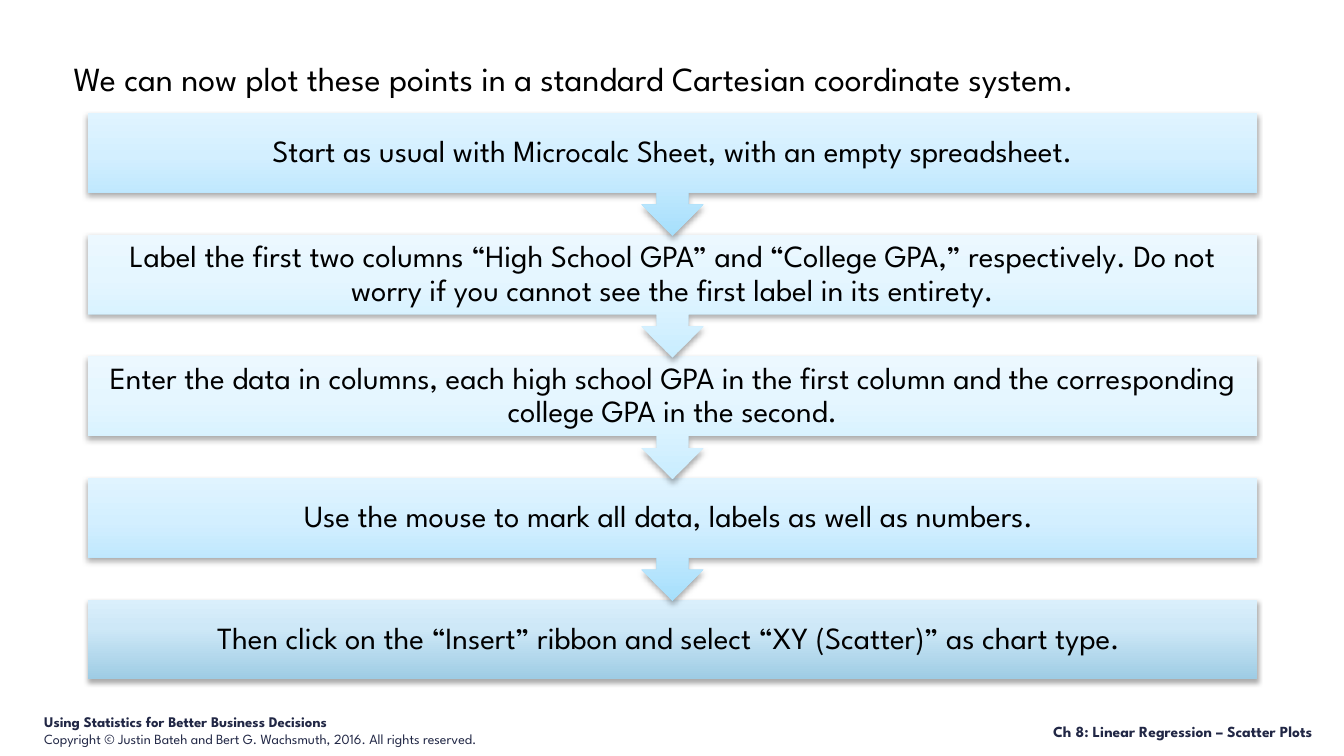
import pptx
import pptx.dml.color
import pptx.enum.text
import pptx.oxml
import pptx.oxml.ns
import pptx.util

Inches = pptx.util.Inches
Pt = pptx.util.Pt
RGBColor = pptx.dml.color.RGBColor
ALIGN = pptx.enum.text.PP_ALIGN
ANCHOR = pptx.enum.text.MSO_ANCHOR

BLACK = RGBColor(0x00, 0x00, 0x00)
NAVY = RGBColor(0x21, 0x27, 0x45)
LIGHT = [RGBColor(0xC9, 0xED, 0xFF), RGBColor(0xE5, 0xF6, 0xFF), RGBColor(0xEC, 0xF8, 0xFF)]
MEDIUM = [RGBColor(0xA6, 0xDF, 0xFC), RGBColor(0xD3, 0xEF, 0xFF), RGBColor(0xE0, 0xF4, 0xFF)]
DARK = [RGBColor(0x9E, 0xCC, 0xE4), RGBColor(0xCE, 0xE8, 0xF7), RGBColor(0xDA, 0xEF, 0xFC)]

STEPS = [
    ("Start as usual with Microcalc Sheet, with an empty spreadsheet.", MEDIUM),
    ("Label the first two columns “High School GPA” and “College GPA,” respectively. "
     "Do not worry if you cannot see the first label in its entirety.", LIGHT),
    ("Enter the data in columns, each high school GPA in the first column "
     "and the corresponding college GPA in the second.", LIGHT),
    ("Use the mouse to mark all data, labels as well as numbers. ", MEDIUM),
    ("Then click on the “Insert” ribbon and select “XY (Scatter)” as chart type. ", DARK),
]
STEP_LEFT, STEP_WIDTH, STEP_HEIGHT = 0.87, 11.6, 0.79
FIRST_TOP, LAST_TOP = 1.12, 5.95
PITCH = (LAST_TOP - FIRST_TOP) / (len(STEPS) - 1)


def write_text(paragraph, text, *, font, size, color=BLACK, bold=False,
               align=ALIGN.LEFT, line_spacing=None, before=0, after=0):
    paragraph.alignment = align
    paragraph.line_spacing = line_spacing
    paragraph.space_before = Pt(before)
    paragraph.space_after = Pt(after)
    run = paragraph.add_run()
    run.text = text
    run.font.name = font
    run.font.size = Pt(size)
    run.font.bold = bold
    run.font.color.rgb = color


class SlideBuilder:
    """Draw the elements of one slide in a shared style."""

    def __init__(self, slide, font):
        self.slide = slide
        self.font = font

    def frame(self, shape, anchor, insets):
        text_frame = shape.text_frame
        text_frame.word_wrap = True
        text_frame.vertical_anchor = anchor
        (text_frame.margin_left, text_frame.margin_top,
         text_frame.margin_right, text_frame.margin_bottom) = map(Inches, insets)
        return text_frame

    def text_box(self, box, lines, anchor=ANCHOR.TOP, insets=(0.1, 0.05, 0.1, 0.05)):
        shape = self.slide.shapes.add_textbox(*map(Inches, box))
        text_frame = self.frame(shape, anchor, insets)
        for index, (text, style) in enumerate(lines):
            paragraph = text_frame.add_paragraph() if index else text_frame.paragraphs[0]
            write_text(paragraph, text, font=self.font, **style)

    def gradient(self, shape, colors):
        stops = "".join(f'<a:gs pos="{position}000"><a:srgbClr val="{color}"/></a:gs>'
                        for position, color in zip((0, 65, 100), colors))
        fill = pptx.oxml.parse_xml(
            f'<a:gradFill {pptx.oxml.ns.nsdecls("a")} rotWithShape="1">'
            f'<a:gsLst>{stops}</a:gsLst><a:lin ang="16200000" scaled="0"/></a:gradFill>')
        shape.line.fill.background()
        shape.element.spPr.find(pptx.oxml.ns.qn("a:ln")).addprevious(fill)

    def shadow(self, shape):
        shape.shadow.inherit = False
        effects = shape.element.spPr.find(pptx.oxml.ns.qn("a:effectLst"))
        effects.append(pptx.oxml.parse_xml(
            f'<a:outerShdw {pptx.oxml.ns.nsdecls("a")} blurRad="{Pt(3.5)}" '
            f'dist="{Pt(2.2)}" dir="5400000" rotWithShape="0">'
            '<a:srgbClr val="000000"><a:alpha val="32000"/></a:srgbClr></a:outerShdw>'))

    def step(self, top, text, colors, has_arrow):
        left, right = STEP_LEFT, STEP_LEFT + STEP_WIDTH
        middle, bottom = left + STEP_WIDTH / 2, top + STEP_HEIGHT
        neck, tip = bottom + 0.12, bottom + 0.43
        arrow = [(middle + 0.155, bottom), (middle + 0.155, neck), (middle + 0.305, neck),
                 (middle, tip), (middle - 0.305, neck), (middle - 0.155, neck),
                 (middle - 0.155, bottom)]
        points = [(right, top), (right, bottom), *(arrow if has_arrow else []), (left, bottom)]
        builder = self.slide.shapes.build_freeform(Inches(left), Inches(top))
        builder.add_line_segments([(Inches(x), Inches(y)) for x, y in points])
        shape = builder.convert_to_shape()
        self.gradient(shape, colors)
        self.shadow(shape)
        insets = (0.13, 0.13, 0.13, 0.56 if has_arrow else 0.13)
        text_frame = self.frame(shape, ANCHOR.MIDDLE, insets)
        write_text(text_frame.paragraphs[0], text, font=self.font, size=22,
                   align=ALIGN.CENTER, line_spacing=0.9)


def main():
    presentation = pptx.Presentation()
    presentation.slide_width = Inches(13.33)
    presentation.slide_height = Inches(7.5)
    slide = presentation.slides.add_slide(presentation.slide_layouts[6])
    builder = SlideBuilder(slide, "League Spartan")

    builder.text_box((0.34, 7.02, 5.28, 0.4), [
        ("Using Statistics for Better Business Decisions",
         dict(size=10.5, color=NAVY, bold=True)),
        ("Copyright © Justin Bateh and Bert G. Wachsmuth, 2016. All rights reserved.",
         dict(size=10, color=NAVY, after=1)),
    ])
    for index, (text, colors) in reversed(list(enumerate(STEPS))):
        builder.step(FIRST_TOP + index * PITCH, text, colors, index < len(STEPS) - 1)
    builder.text_box((6.5, 7.11, 6.62, 0.29), [
        ("Ch 8: Linear Regression – Scatter Plots",
         dict(size=11, color=NAVY, bold=True, align=ALIGN.RIGHT)),
    ], anchor=ANCHOR.BOTTOM)
    builder.text_box((0.56, 0.52, 12.56, 0.6), [
        ("We can now plot these points in a standard Cartesian coordinate system.",
         dict(size=24.1, before=6, after=12)),
    ], insets=(0.17, 0.05, 0.1, 0.05))

    presentation.save("out.pptx")


if __name__ == "__main__":
    main()
